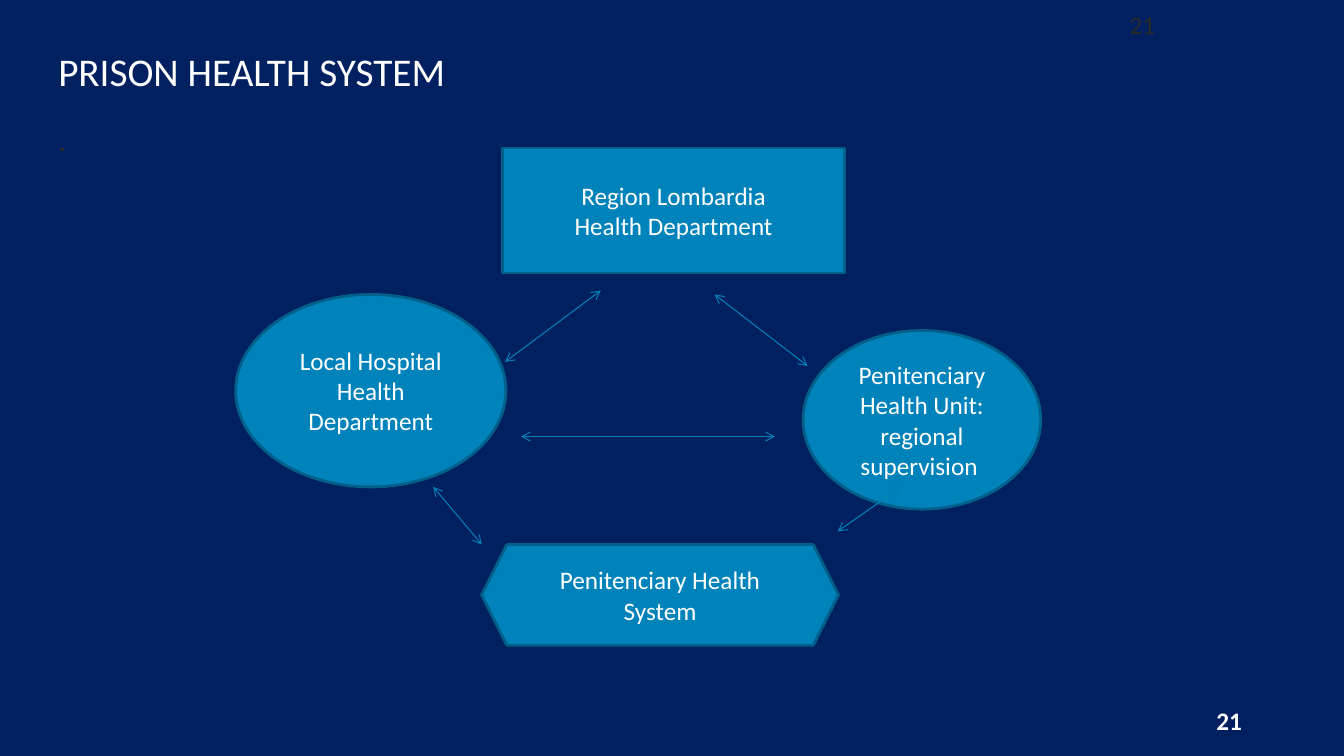
"""Build the slide on the prison health system."""
from lxml import etree
from pptx import Presentation
from pptx.dml.color import RGBColor
from pptx.enum.shapes import MSO_CONNECTOR, MSO_SHAPE
from pptx.enum.text import MSO_ANCHOR, PP_ALIGN
from pptx.oxml.ns import qn
from pptx.util import Cm, Pt

RECTANGLE, OVAL, HEXAGON = MSO_SHAPE.RECTANGLE, MSO_SHAPE.OVAL, MSO_SHAPE.HEXAGON
STRAIGHT = MSO_CONNECTOR.STRAIGHT
LEFT, CENTER, RIGHT = PP_ALIGN.LEFT, PP_ALIGN.CENTER, PP_ALIGN.RIGHT
TOP, MIDDLE, BOTTOM = MSO_ANCHOR.TOP, MSO_ANCHOR.MIDDLE, MSO_ANCHOR.BOTTOM
FONT = "Calibri"
COLORS = {
    "background": "002060",
    "body": "0082BA",
    "outline": "00608A",
    "arrow": "007FB6",
    "light": "FFFFFF",
    "dark": "2D2926",
}

BODIES = [
    (RECTANGLE, (12.67, 3.73, 8.61, 3.15), ["Region Lombardia", "Health Department"]),
    (OVAL, (5.94, 7.42, 6.81, 4.85), ["Local Hospital Health Department"]),
    (OVAL, (20.24, 8.33, 5.99, 4.5), ["Penitenciary Health Unit: regional supervision "]),
    (HEXAGON, (12.14, 13.72, 8.99, 2.54), ["Penitenciary Health System"]),
]
EXCHANGES = [
    ((15.14, 7.32), (12.73, 9.12)),
    ((13.13, 11), (19.53, 11)),
    ((18.01, 7.42), (20.35, 9.22)),
    ((10.92, 12.27), (12.14, 13.72)),
    ((22.71, 12.27), (21.11, 13.39)),
]


def color(name):
    return RGBColor.from_string(COLORS[name])


def write(frame, lines, size=18, ink="light", bold=False, align=LEFT, anchor=TOP, spacing=None):
    frame.word_wrap = True
    frame.vertical_anchor = anchor
    for index, line in enumerate(lines):
        paragraph = frame.add_paragraph() if index else frame.paragraphs[0]
        paragraph.alignment = align
        paragraph.line_spacing = spacing
        run = paragraph.add_run()
        run.text = line
        run.font.name = FONT
        run.font.size = Pt(size)
        run.font.bold = bold
        run.font.color.rgb = color(ink)


def add_text(slide, box, line, **style):
    label = slide.shapes.add_textbox(*map(Cm, box))
    write(label.text_frame, [line], **style)


def add_body(slide, kind, box, lines):
    body = slide.shapes.add_shape(kind, *map(Cm, box))
    body.shadow.inherit = False
    body.fill.solid()
    body.fill.fore_color.rgb = color("body")
    body.line.color.rgb = color("outline")
    body.line.width = Pt(2)
    write(body.text_frame, lines, align=CENTER, anchor=MIDDLE)


def add_exchange(slide, start, end):
    arrow = slide.shapes.add_connector(STRAIGHT, *map(Cm, start + end))
    arrow.line.color.rgb = color("arrow")
    arrow.line.width = Pt(0.75)
    outline = arrow.line._get_or_add_ln()
    for tip in ("a:headEnd", "a:tailEnd"):
        etree.SubElement(outline, qn(tip), type="arrow")
    etree.SubElement(arrow._element.spPr, qn("a:effectLst"))


def main():
    deck = Presentation()
    deck.slide_width, deck.slide_height = Cm(33.87), Cm(19.05)
    slide = deck.slides.add_slide(deck.slide_layouts[6])
    slide.background.fill.solid()
    slide.background.fill.fore_color.rgb = color("background")

    add_text(slide, (28.22, 0.1, 3, 1.02), "21", ink="dark")
    add_text(slide, (1.22, 0.25, 31.9, 2.29), "PRISON HEALTH SYSTEM",
             size=28, anchor=BOTTOM, spacing=0.95)
    add_text(slide, (1.22, 2.92, 31.9, 14.2), ".", size=22, ink="dark")
    for kind, box, lines in BODIES:
        add_body(slide, kind, box, lines)
    for start, end in EXCHANGES:
        add_exchange(slide, start, end)
    add_text(slide, (23.93, 17.65, 7.62, 1.02), "21", bold=True, align=RIGHT)

    deck.save("out.pptx")


if __name__ == "__main__":
    main()
